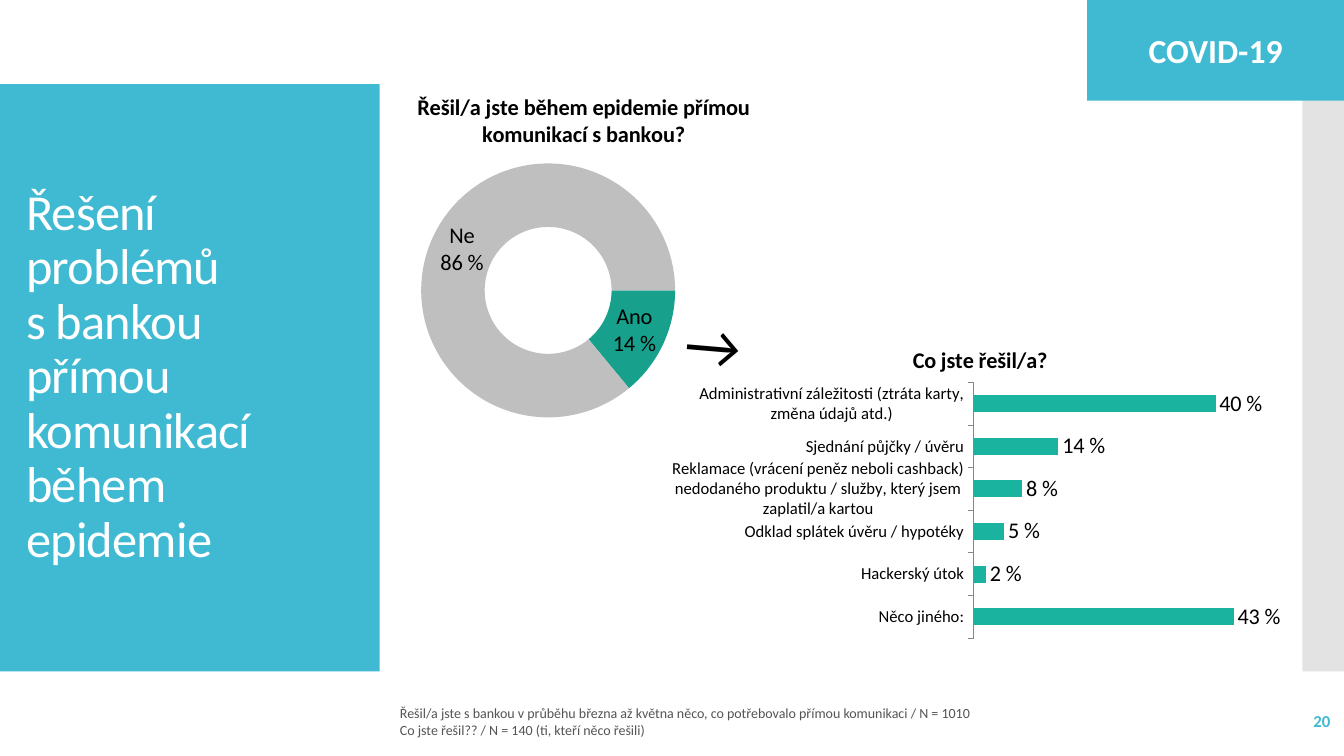
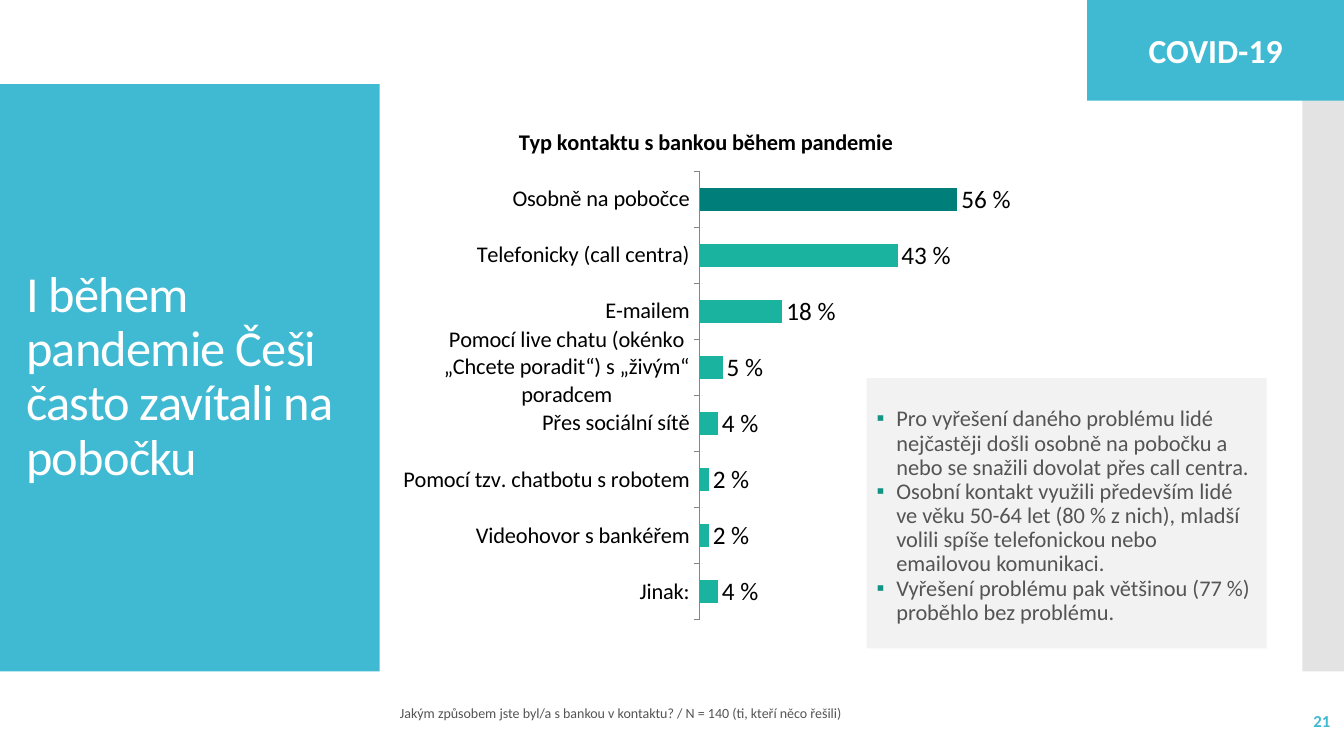
"""Build two slides on how people dealt with their banks during the epidemic."""
from lxml import etree
from pptx import Presentation
from pptx.chart.data import CategoryChartData
from pptx.dml.color import RGBColor
from pptx.enum.chart import XL_CHART_TYPE, XL_LABEL_POSITION, XL_TICK_LABEL_POSITION, XL_TICK_MARK
from pptx.enum.shapes import MSO_SHAPE
from pptx.enum.text import MSO_ANCHOR, MSO_AUTO_SIZE, PP_ALIGN
from pptx.oxml.ns import qn
from pptx.util import Cm, Pt

RECT = MSO_SHAPE.RECTANGLE
RING, BAR = XL_CHART_TYPE.DOUGHNUT, XL_CHART_TYPE.BAR_CLUSTERED
OUTER = XL_LABEL_POSITION.OUTSIDE_END
LOW = XL_TICK_LABEL_POSITION.LOW
TICK, BARE = XL_TICK_MARK.OUTSIDE, XL_TICK_MARK.NONE
LEFT, MID, RIGHT = PP_ALIGN.LEFT, PP_ALIGN.CENTER, PP_ALIGN.RIGHT
TOP, HALF = MSO_ANCHOR.TOP, MSO_ANCHOR.MIDDLE
FIXED = MSO_AUTO_SIZE.NONE

FONT = "Calibri"
HUES = {
    "blue": "40BAD2", "side": "E3E3E3", "white": "FFFFFF", "black": "000000",
    "text": "545454", "panel": "F2F2F2", "bullet": "139383", "bar": "1AB39F",
    "dark": "007E79", "yes": "17A08C", "no": "BFBFBF", "axis": "868686",
}
SIZE = 33.87, 19.05
BAND, SIDE = (0, 2.12, 9.57, 14.8), (32.82, 2.12, 1.05, 14.8)
TAG, HEAD = (27.4, 0, 6.47, 2.54), (0.41, 3.12, 8.79, 12.78)
NUMBER, NOTE = (29.54, 17.65, 4.24, 1.02), (9.83, 17.63, 19.71, 1.12)
ARROW, PANEL = (16.84, 7.29, 2.9, 2.13), (21.84, 9.53, 10.08, 6.81)

SLIDES = [
    {
        "head": "Řešení problémů\vs bankou přímou komunikací během epidemie",
        "number": 20,
        "notes": [
            "Řešil/a jste s bankou v průběhu března až května něco, co potřebovalo přímou komunikaci / N = 1010",
            "Co jste řešil?? / N = 140 (ti, kteří něco řešili)",
        ],
        "charts": [
            {
                "kind": RING, "box": (8.31, 1.85, 12.8, 11.05),
                "title": "Řešil/a jste během epidemie přímou komunikací s bankou?",
                "plot": (0.18, 0.2, 0.5, 0.59), "label": 16,
                "data": [("Ano", 0.14), ("Ne", 0.86)],
                "tints": {0: "yes", 1: "no"},
            },
            {
                "kind": BAR, "box": (16.94, 8.28, 15.37, 8.48),
                "title": "Co jste řešil/a?",
                "plot": (0.49, 0.16, 0.51, 0.76), "label": 16, "names": 12, "top": 0.51,
                "data": [
                    ("Něco jiného:", 0.43),
                    ("Hackerský útok", 0.02),
                    ("Odklad splátek úvěru / hypotéky", 0.05),
                    ("Reklamace (vrácení peněz neboli cashback) nedodaného produktu / služby, "
                     "který jsem zaplatil/a kartou", 0.08),
                    ("Sjednání půjčky / úvěru", 0.14),
                    ("Administrativní záležitosti (ztráta karty, změna údajů atd.)", 0.4),
                ],
                "tints": {},
            },
        ],
        "arrow": "↘",
    },
    {
        "head": "I během pandemie Češi často zavítali na pobočku",
        "number": 21,
        "notes": ["Jakým způsobem jste byl/a s bankou v kontaktu? / N = 140 (ti, kteří něco řešili)"],
        "points": [
            "Pro vyřešení daného problému lidé nejčastěji došli osobně na pobočku a nebo se snažili "
            "dovolat přes call centra.",
            "Osobní kontakt využili především lidé ve věku 50-64 let (80 % z nich), mladší volili spíše "
            "telefonickou nebo emailovou komunikaci.",
            "Vyřešení problému pak většinou (77 %) proběhlo bez problému.",
        ],
        "charts": [
            {
                "kind": BAR, "box": (9.88, 2.69, 15.82, 13.61),
                "title": "Typ kontaktu s bankou během pandemie",
                "plot": (0.49, 0.12, 0.44, 0.83), "label": 18, "names": 16, "top": 0.6,
                "data": [
                    ("Jinak:", 0.04),
                    ("Videohovor s bankéřem", 0.02),
                    ("Pomocí tzv. chatbotu s robotem", 0.02),
                    ("Přes sociální sítě", 0.04),
                    ("Pomocí live chatu (okénko „Chcete poradit“) s „živým“ poradcem", 0.05),
                    ("E-mailem", 0.18),
                    ("Telefonicky (call centra)", 0.43),
                    ("Osobně na pobočce", 0.56),
                ],
                "tints": {7: "dark"},
            },
        ],
    },
]


def hue(name):
    return RGBColor.from_string(HUES[name])


def cms(box):
    return [Cm(n) for n in box]


def style(font, size, color="black", bold=False):
    font.name, font.size, font.bold = FONT, Pt(size), bold
    font.color.rgb = hue(color)


def paint(fmt, color):
    fmt.fill.solid()
    fmt.fill.fore_color.rgb = hue(color)


def mark(par):
    props = par._p.get_or_add_pPr()
    props.set("marL", str(Cm(0.5)))
    props.set("indent", str(-Cm(0.5)))
    tone = etree.SubElement(props, qn("a:buClr"))
    etree.SubElement(tone, qn("a:srgbClr")).set("val", HUES["bullet"])
    etree.SubElement(props, qn("a:buFont")).set("typeface", "Arial")
    etree.SubElement(props, qn("a:buChar")).set("char", "▪")


def put(frame, lines, size, color="black", bold=False, align=LEFT, lead=None,
        bullet=False, tight=0):
    for i, line in enumerate(lines):
        par = frame.paragraphs[0] if i == 0 else frame.add_paragraph()
        par.text = line
        par.alignment = align
        if lead:
            par.line_spacing = lead
        if bullet:
            mark(par)
        for run in par.runs:
            style(run.font, size, color, bold)
            if tight:
                run.font._element.set("spc", str(tight))


def block(slide, box, color):
    shape = slide.shapes.add_shape(RECT, *cms(box))
    shape.shadow.inherit = False
    paint(shape, color)
    shape.line.fill.background()
    return shape


def label(slide, box, lines, anchor=TOP, **form):
    shape = slide.shapes.add_textbox(*cms(box))
    shape.text_frame.word_wrap = True
    shape.text_frame.vertical_anchor = anchor
    put(shape.text_frame, lines, **form)
    return shape


def frame_plot(chart, plot):
    area = chart._chartSpace.xpath("c:chart/c:plotArea")[0]
    for old in area.findall(qn("c:layout")):
        area.remove(old)
    layout = etree.Element(qn("c:layout"))
    area.insert(0, layout)
    manual = etree.SubElement(layout, qn("c:manualLayout"))
    parts = [("layoutTarget", "inner"), ("xMode", "edge"), ("yMode", "edge")]
    for tag, value in parts + list(zip("xywh", plot)):
        etree.SubElement(manual, qn("c:" + tag)).set("val", str(value))


def set_ring(chart, tags):
    chart._chartSpace.xpath(".//c:firstSliceAng")[0].set("val", "90")
    tags.show_category_name = True
    tags.show_percentage = False
    gap = etree.Element(qn("c:separator"))
    gap.text = "\n"
    tags._element.find(qn("c:showBubbleSize")).addnext(gap)


def set_bars(chart, tags, item):
    chart.plots[0].gap_width = 150
    tags.position = OUTER
    scale, names = chart.value_axis, chart.category_axis
    scale.minimum_scale, scale.maximum_scale = 0, item["top"]
    scale.has_major_gridlines = False
    scale.visible = False
    names.major_tick_mark, names.minor_tick_mark = TICK, BARE
    names.tick_label_position = LOW
    names.format.line.color.rgb = hue("axis")
    style(names.tick_labels.font, item["names"])


def graph(slide, item):
    data = CategoryChartData(number_format="0%")
    data.categories = [name for name, _ in item["data"]]
    data.add_series("Series 1", [value for _, value in item["data"]])
    chart = slide.shapes.add_chart(item["kind"], *cms(item["box"]), data).chart
    style(chart.font, 12)
    chart.has_legend = False
    chart.has_title = True
    put(chart.chart_title.text_frame, [item["title"]], size=16, bold=True, align=MID)
    frame_plot(chart, item["plot"])
    plot = chart.plots[0]
    plot.vary_by_categories = False
    series = plot.series[0]
    paint(series.format, "bar")
    for i, color in item["tints"].items():
        paint(series.points[i].format, color)
    tags = series.data_labels
    tags.show_value = True
    tags.number_format, tags.number_format_is_linked = "0 %", False
    style(tags.font, item["label"])
    if item["kind"] == RING:
        set_ring(chart, tags)
    else:
        set_bars(chart, tags, item)


def base(deck, item):
    slide = deck.slides.add_slide(deck.slide_layouts[5])
    for box, color in ((BAND, "blue"), (SIDE, "side")):
        slide.shapes._spTree.insert(2, block(slide, box, color)._element)
    title = slide.shapes.title
    title.left, title.top, title.width, title.height = cms(HEAD)
    frame = title.text_frame
    frame.auto_size, frame.word_wrap, frame.vertical_anchor = FIXED, True, HALF
    put(frame, [item["head"]], size=36, color="white", lead=0.9, tight=-60)
    label(slide, NUMBER, [str(item["number"])], HALF, size=12, color="blue", bold=True, align=RIGHT)
    label(slide, NOTE, item["notes"], size=10, color="text")
    tag = block(slide, TAG, "blue").text_frame
    tag.vertical_anchor = HALF
    put(tag, ["COVID-19"], size=24, color="white", bold=True, align=MID)
    return slide


def main():
    deck = Presentation()
    deck.slide_width, deck.slide_height = cms(SIZE)
    for item in SLIDES:
        slide = base(deck, item)
        if "points" in item:
            frame = block(slide, PANEL, "panel").text_frame
            frame.word_wrap, frame.vertical_anchor = True, TOP
            frame.margin_top = Cm(0.74)
            put(frame, item["points"], size=16, color="text", lead=0.9, bullet=True)
        for chart in item["charts"]:
            graph(slide, chart)
        if "arrow" in item:
            label(slide, ARROW, [item["arrow"]], size=44).rotation = 319.9
    deck.save("out.pptx")


if __name__ == "__main__":
    main()
